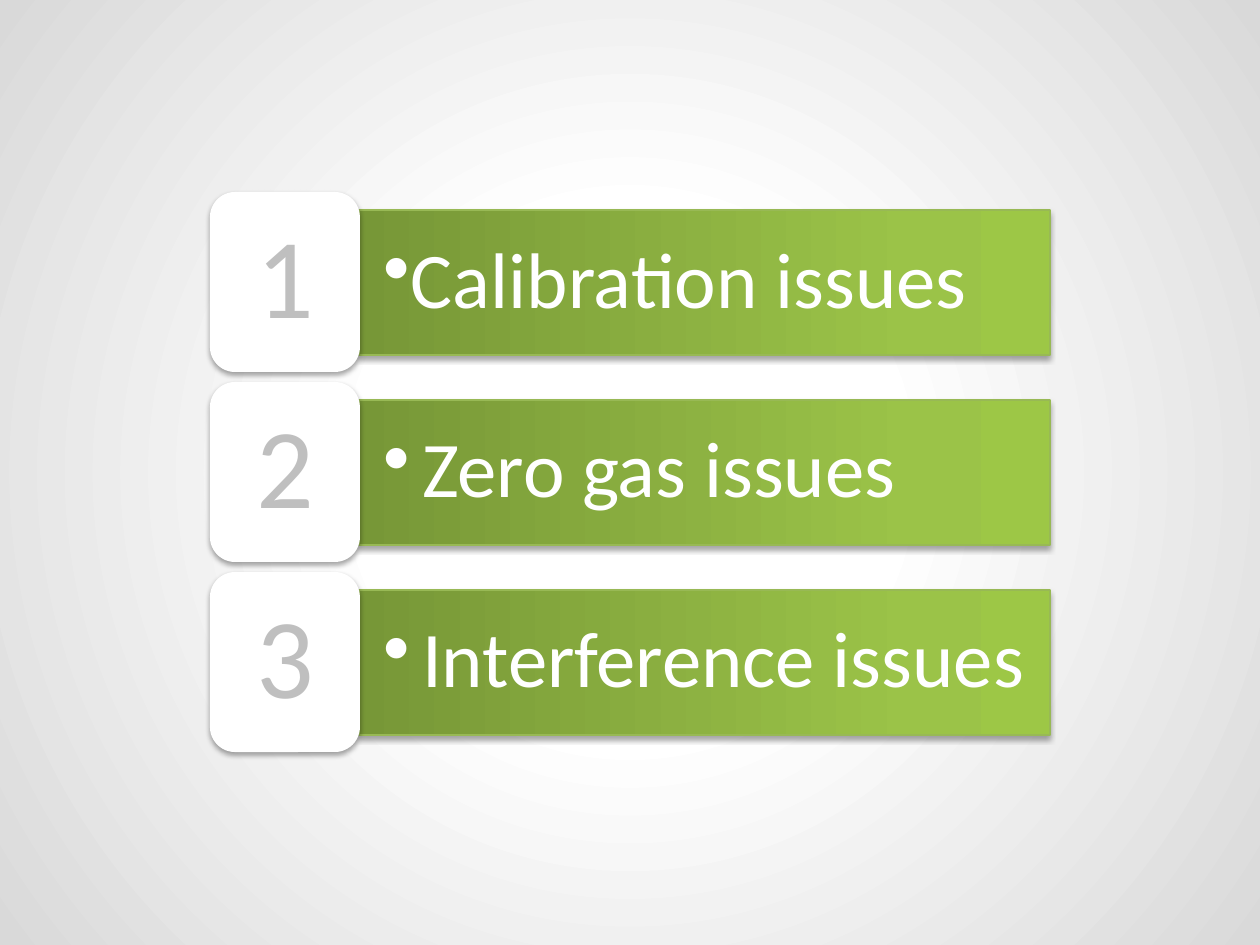
import pptx
import pptx.dml.color
import pptx.enum.shapes
import pptx.enum.text
import pptx.oxml
import pptx.oxml.ns
import pptx.util
from lxml import etree

COLORS = {
    "white": "FFFFFF",
    "edge": "D9D9D9",
    "digit": "BFBFBF",
    "dark": "779737",
    "green": "9BC348",
    "bright": "9DC746",
    "outline": "98B955",
    "shadow": "000000",
}
ISSUES = [("Calibration issues", 0), ("Zero gas issues", 39), ("Interference issues", 39)]
ROW_TOP, ROW_PITCH = 192, 190


class IssueSlide:
    """Holds the style and the current slide of a numbered list of issues."""

    def __init__(self, font="Calibri", scale=914400 // 126):
        self.font = font
        self.scale = scale
        self.deck = pptx.Presentation()
        self.deck.slide_width = pptx.util.Inches(10)
        self.deck.slide_height = pptx.util.Inches(7.5)
        self.page = self.deck.slides.add_slide(self.deck.slide_layouts[6])

    def px(self, length):
        return pptx.util.Emu(length * self.scale)

    def color(self, name):
        return pptx.dml.color.RGBColor.from_string(COLORS[name])

    def element(self, parent, tag, **attributes):
        child = etree.SubElement(parent, pptx.oxml.ns.qn(tag))
        for key, value in attributes.items():
            child.set(key, str(value))
        return child

    def gradient(self, fill, owner, stops):
        fill.gradient()
        gradient = owner.find(".//" + pptx.oxml.ns.qn("a:gradFill"))
        for child in list(gradient):
            gradient.remove(child)
        stop_list = self.element(gradient, "a:gsLst")
        for percent, name in stops:
            stop = self.element(stop_list, "a:gs", pos=percent * 1000)
            self.element(stop, "a:srgbClr", val=COLORS[name])
        return gradient

    def background(self):
        stops = [(33, "white"), (100, "edge")]
        gradient = self.gradient(self.page.background.fill, self.page.element, stops)
        circle = self.element(gradient, "a:path", path="circle")
        self.element(circle, "a:fillToRect", l=50000, t=50000, r=50000, b=50000)

    def shadow(self, shape):
        shape.shadow.inherit = False
        effects = shape.element.spPr.find(pptx.oxml.ns.qn("a:effectLst"))
        outer = self.element(effects, "a:outerShdw", blurRad=pptx.util.Pt(3.1),
                             dist=pptx.util.Pt(1.8), dir=5400000, rotWithShape=0)
        tint = self.element(outer, "a:srgbClr", val=COLORS["shadow"])
        self.element(tint, "a:alpha", val=35000)

    def shape(self, kind, left, top, width, height):
        preset = getattr(pptx.enum.shapes.MSO_SHAPE, kind)
        return self.page.shapes.add_shape(preset, *map(self.px, (left, top, width, height)))

    def text(self, shape, words, size, color, align, insets):
        box = shape.text_frame
        box.word_wrap = True
        box.vertical_anchor = pptx.enum.text.MSO_ANCHOR.MIDDLE
        box.margin_left = box.margin_right = self.px(insets[0])
        box.margin_top = box.margin_bottom = self.px(insets[1])
        para = box.paragraphs[0]
        para.alignment = getattr(pptx.enum.text.PP_ALIGN, align)
        para.line_spacing = 0.9
        span = para.add_run()
        span.text = words
        span.font.name = self.font
        span.font.size = pptx.util.Pt(size)
        span.font.color.rgb = self.color(color)
        return para

    def bar(self, words, indent, top):
        shape = self.shape("RECTANGLE", 359, top, 691, 145)
        stops = [(0, "dark"), (80, "green"), (100, "bright")]
        gradient = self.gradient(shape.fill, shape.element, stops)
        self.element(gradient, "a:lin", ang=0, scaled=0)
        shape.line.color.rgb = self.color("outline")
        shape.line.width = pptx.util.Pt(0.75)
        self.shadow(shape)
        para = self.text(shape, words, 45, "white", "LEFT", (24, 11))
        para.level = 1
        properties = para._p.get_or_add_pPr()
        properties.set("marL", str(self.px(indent)))
        properties.set("indent", str(-self.px(indent)))
        self.element(properties, "a:buChar", char="•")

    def badge(self, number, top):
        shape = self.shape("ROUNDED_RECTANGLE", 210, top, 150, 180)
        shape.fill.solid()
        shape.fill.fore_color.rgb = self.color("white")
        shape.line.fill.background()
        self.shadow(shape)
        self.text(shape, str(number), 65, "digit", "CENTER", (34, 18))


def main():
    slide = IssueSlide()
    slide.background()
    for row, (words, indent) in enumerate(ISSUES):
        top = ROW_TOP + row * ROW_PITCH
        slide.bar(words, indent, top + 18)
        slide.badge(row + 1, top)
    slide.deck.save("out.pptx")


if __name__ == "__main__":
    main()
